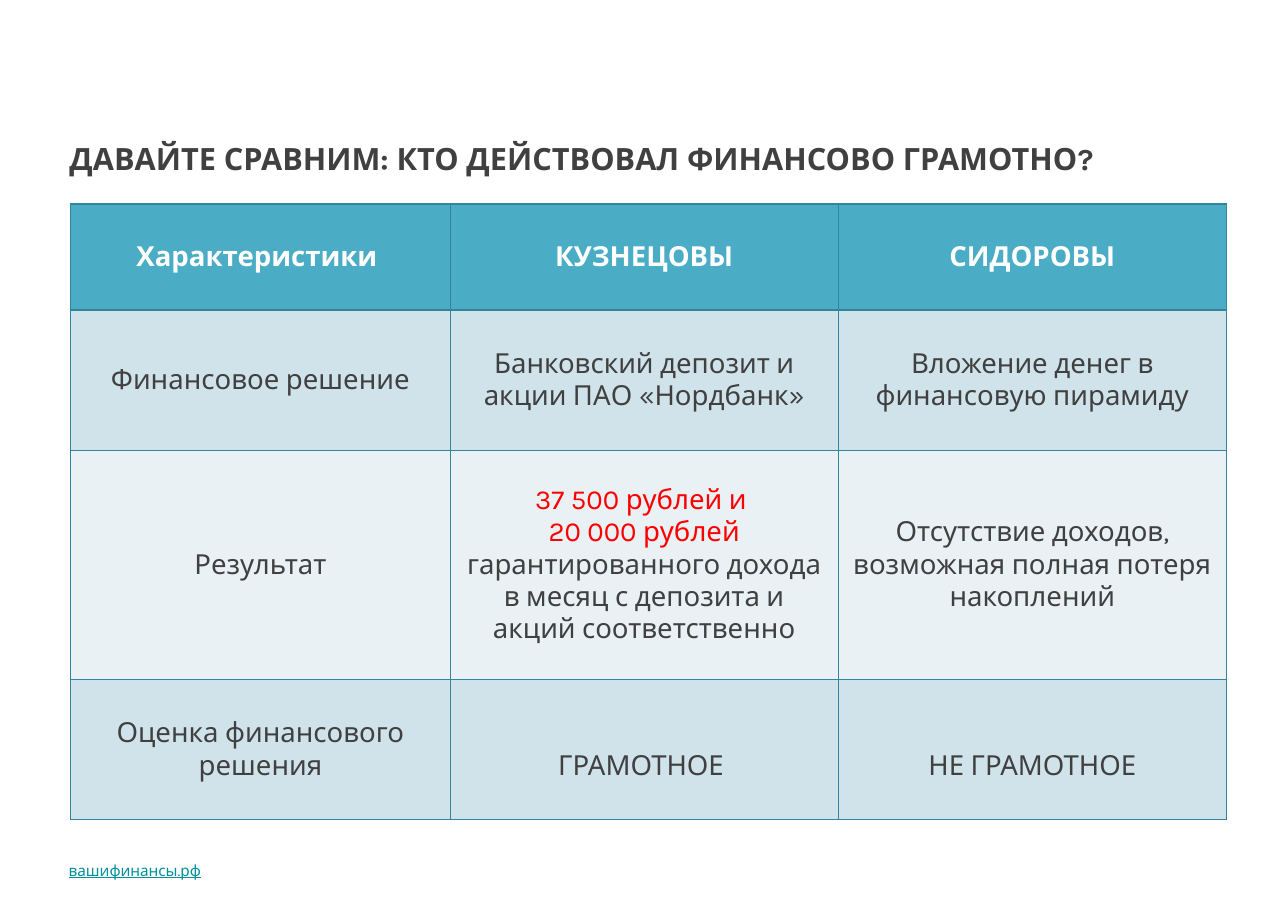
from lxml.etree import SubElement
from pptx import Presentation
from pptx.dml.color import RGBColor
from pptx.enum.text import MSO_ANCHOR as Anchor, MSO_AUTO_SIZE as AutoSize, PP_ALIGN as Align
from pptx.oxml.ns import qn
from pptx.util import Cm, Pt

FONT = "Karla"
DARK = RGBColor(0x40, 0x40, 0x40)
WHITE = RGBColor(0xFF, 0xFF, 0xFF)
RED = RGBColor(0xFF, 0x00, 0x00)
LINK = RGBColor(0x00, 0x90, 0x9B)
BORDER = RGBColor(0x31, 0x85, 0x9C)
HEADER = RGBColor(0x4B, 0xAC, 0xC6)
BANDS = [RGBColor(0xE9, 0xF1, 0xF5), RGBColor(0xD0, 0xE3, 0xEA)]

INSET = Cm(0.13)
LINE_HEIGHT = Cm(0.74)
COLUMNS = [8.74, 8.94, 8.94]
ROWS = [2.44, 3.23, 5.28, 3.23]
CELLS = [
    ["Характеристики ", "КУЗНЕЦОВЫ", "СИДОРОВЫ"],
    ["Финансовое решение", "Банковский депозит и акции ПАО «Нордбанк»",
     "Вложение денег в финансовую пирамиду"],
    ["Результат",
     [[("37 500 рублей и ", RED)],
      [("20 000 рублей ", RED),
       ("гарантированного дохода в месяц с депозита и акций соответственно", DARK)]],
     "Отсутствие доходов, возможная полная потеря накоплений"],
    ["Оценка финансового решения", "ГРАМОТНОЕ ", "НЕ ГРАМОТНОЕ"],
]


def add_run(p, text, size, color, bold=False, underline=False):
    r = p.add_run()
    r.text = text
    font = r.font
    font.name, font.size, font.bold, font.underline = FONT, Pt(size), bold, underline
    font.color.rgb = color


def set_frame(tf, anchor):
    tf.word_wrap = True
    tf.auto_size = AutoSize.NONE
    tf.vertical_anchor = anchor
    tf.margin_left = tf.margin_right = tf.margin_top = tf.margin_bottom = INSET


def add_title(s, left, top, width, height):
    sp = s.shapes.title
    sp.left, sp.top, sp.width, sp.height = left, top, width, height
    set_frame(sp.text_frame, Anchor.TOP)
    p = sp.text_frame.paragraphs[0]
    p.alignment = Align.LEFT
    add_run(p, "ДАВАЙТЕ СРАВНИМ: КТО ДЕЙСТВОВАЛ ФИНАНСОВО ГРАМОТНО?", 20, DARK, bold=True)


def add_borders(cell):
    tc_pr = cell._tc.get_or_add_tcPr()
    for side in ("a:lnL", "a:lnR", "a:lnT", "a:lnB"):
        ln = SubElement(tc_pr, qn(side), w=str(Pt(1)))
        fill = SubElement(ln, qn("a:solidFill"))
        SubElement(fill, qn("a:srgbClr"), val=str(BORDER))


def fill_cell(cell, content, row):
    add_borders(cell)
    cell.fill.solid()
    cell.fill.fore_color.rgb = BANDS[row % 2] if row else HEADER
    cell.vertical_anchor = Anchor.MIDDLE
    if isinstance(content, str):
        content = [[(content, DARK if row else WHITE)]]
    tf = cell.text_frame
    for i, runs in enumerate(content):
        p = tf.add_paragraph() if i else tf.paragraphs[0]
        p.alignment = Align.CENTER
        for text, color in runs:
            add_run(p, text, 18, color, bold=row == 0)


def add_comparison(s, left, top, width, height):
    table = s.shapes.add_table(len(ROWS), len(COLUMNS), left, top, width, height).table
    for column, size in zip(table.columns, COLUMNS):
        column.width = Cm(size)
    for row, size in zip(table.rows, ROWS):
        row.height = Cm(size)
    for i, contents in enumerate(CELLS):
        for j, content in enumerate(contents):
            fill_cell(table.cell(i, j), content, i)
    for j in (1, 2):
        table.cell(len(ROWS) - 1, j).margin_top = INSET + LINE_HEIGHT


def add_footer(s, left, top, width, height):
    tf = s.shapes.add_textbox(left, top, width, height).text_frame
    set_frame(tf, Anchor.MIDDLE)
    add_run(tf.paragraphs[0], "вашифинансы.рф", 10, LINK, underline=True)


def main():
    prs = Presentation()
    prs.slide_width, prs.slide_height = Cm(29.67), Cm(20.98)
    s = prs.slides.add_slide(prs.slide_layouts[5])
    add_footer(s, Cm(1.45), Cm(19.69), Cm(10.08), Cm(0.71))
    add_title(s, Cm(1.47), Cm(3.1), Cm(26.72), Cm(2.44))
    add_comparison(s, Cm(1.63), Cm(4.7), Cm(sum(COLUMNS)), Cm(sum(ROWS)))
    prs.save("out.pptx")


if __name__ == "__main__":
    main()
